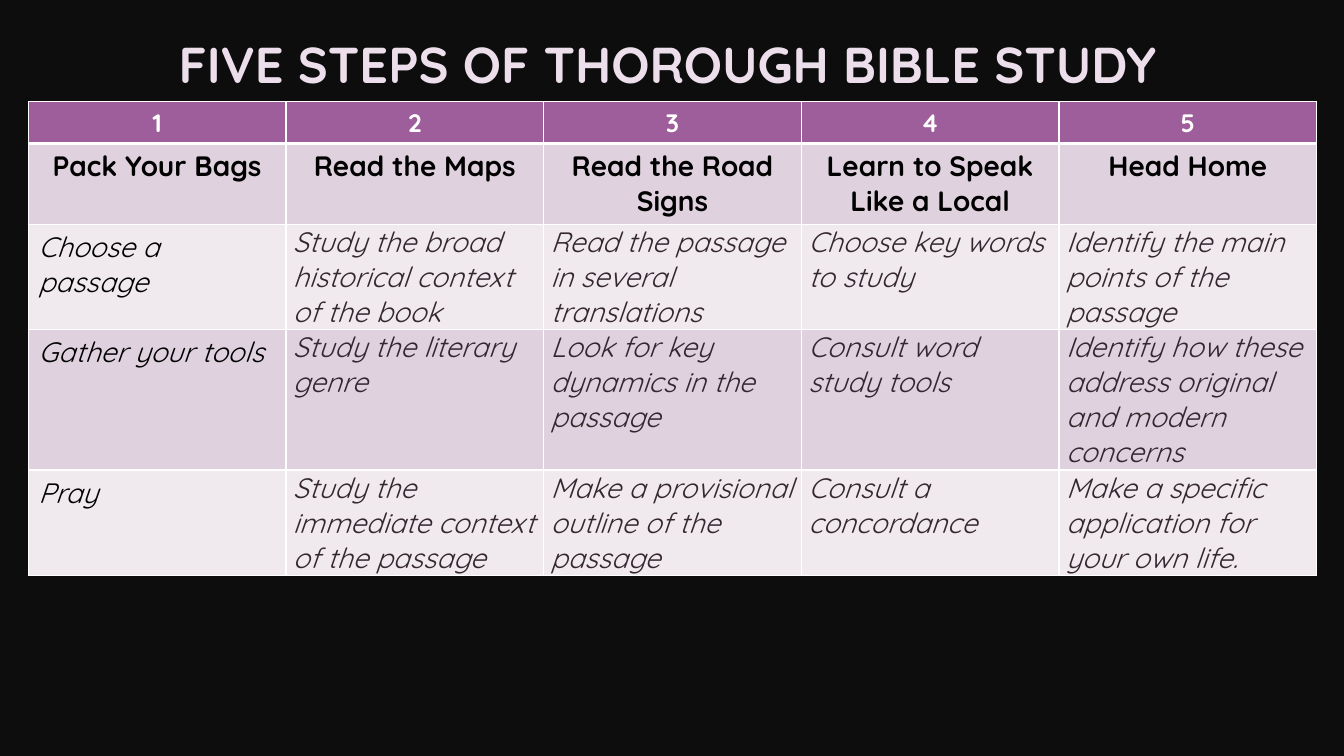
"""Build a slide with a table of five Bible study steps."""
from dataclasses import dataclass

from lxml import etree
from pptx import Presentation
from pptx.dml.color import RGBColor
from pptx.enum.text import MSO_ANCHOR, MSO_AUTO_SIZE, PP_ALIGN
from pptx.oxml.ns import qn
from pptx.slide import Slide
from pptx.table import _Cell
from pptx.text.text import _Paragraph
from pptx.util import Inches, Pt

CENTER, LEFT = PP_ALIGN.CENTER, PP_ALIGN.LEFT
TOP = MSO_ANCHOR.TOP
NO_AUTOFIT = MSO_AUTO_SIZE.NONE

FONT = "Quicksand"
COLORS = {
    "background": "0D0D0D",
    "title": "ECDFEB",
    "header": "9E5E9B",
    "dark_band": "DFD2DE",
    "light_band": "F0EAEF",
    "white": "FFFFFF",
    "black": "000000",
    "detail": "35272F",
}
SLIDE_WIDTH, SLIDE_HEIGHT = Inches(13.33), Inches(7.5)
CONTENT_WIDTH = Inches(12.78)
TITLE_ONLY_LAYOUT = 5
TITLE = "FIVE STEPS OF THOROUGH BIBLE STUDY"


@dataclass(frozen=True)
class TextStyle:
    size: int
    color: str
    bold: bool = False
    italic: bool = False
    alignment: PP_ALIGN = LEFT


@dataclass(frozen=True)
class StepRow:
    height: float
    fill: str
    texts: tuple[str, ...]
    first_style: TextStyle
    other_style: TextStyle
    top_border: float = 1
    bottom_border: float = 1
    tight: bool = False


TITLE_STYLE = TextStyle(36, "title", bold=True, alignment=CENTER)
NUMBER = TextStyle(18, "white", bold=True, alignment=CENTER)
HEADING = TextStyle(20, "black", bold=True, alignment=CENTER)
LEAD = TextStyle(20, "black", italic=True)
DETAIL = TextStyle(20, "detail", italic=True)

ROWS = (
    StepRow(0.41, "header", ("1", "2", "3", "4", "5"), NUMBER, NUMBER, bottom_border=3),
    StepRow(0.8, "dark_band", (
        "Pack Your Bags", "Read the Maps", "Read the Road Signs",
        "Learn to Speak Like a Local", "Head Home",
    ), HEADING, HEADING, top_border=3),
    StepRow(1.04, "light_band", (
        "Choose a passage",
        "Study the broad historical context of the book",
        "Read the passage in several translations",
        "Choose key words to study",
        "Identify the main points of the passage",
    ), LEAD, DETAIL, tight=True),
    StepRow(1.39, "dark_band", (
        "Gather your tools",
        "Study the literary genre",
        "Look for key dynamics in the passage",
        "Consult word study tools",
        "Identify how these address original and modern concerns",
    ), LEAD, DETAIL, tight=True),
    StepRow(1.04, "light_band", (
        "Pray",
        "Study the immediate context of the passage",
        "Make a provisional outline of the passage",
        "Consult a concordance",
        "Make a specific application for your own life.",
    ), LEAD, DETAIL, tight=True),
)


def color(name: str) -> RGBColor:
    return RGBColor.from_string(COLORS[name])


def style_paragraph(paragraph: _Paragraph, style: TextStyle) -> None:
    paragraph.alignment = style.alignment
    font = paragraph.font
    font.name = FONT
    font.size = Pt(style.size)
    font.bold = style.bold
    font.italic = style.italic
    font.color.rgb = color(style.color)


def add_borders(cell: _Cell, top: float, bottom: float) -> None:
    properties = cell._tc.get_or_add_tcPr()
    for side, width in (("L", 1), ("R", 1), ("T", top), ("B", bottom)):
        line = etree.SubElement(properties, qn(f"a:ln{side}"), w=str(Pt(width)))
        fill = etree.SubElement(line, qn("a:solidFill"))
        etree.SubElement(fill, qn("a:srgbClr"), val=COLORS["white"])


def fill_cell(cell: _Cell, row: StepRow, column: int) -> None:
    cell.text = row.texts[column]
    cell.vertical_anchor = TOP
    if row.tight and column > 0:
        cell.margin_left = cell.margin_right = Inches(0.07)
        cell.margin_top = cell.margin_bottom = 0
    style = row.other_style if column else row.first_style
    style_paragraph(cell.text_frame.paragraphs[0], style)
    add_borders(cell, row.top_border, row.bottom_border)
    cell.fill.solid()
    cell.fill.fore_color.rgb = color(row.fill)


def add_title(slide: Slide) -> None:
    title = slide.shapes.title
    title.left, title.top = Inches(0.23), Inches(0.28)
    title.width, title.height = CONTENT_WIDTH, Inches(0.94)
    frame = title.text_frame
    frame.text = TITLE
    frame.word_wrap = True
    frame.auto_size = NO_AUTOFIT
    frame.vertical_anchor = TOP
    style_paragraph(frame.paragraphs[0], TITLE_STYLE)


def add_steps_table(slide: Slide) -> None:
    column_count = len(ROWS[0].texts)
    height = Inches(sum(row.height for row in ROWS))
    table = slide.shapes.add_table(
        len(ROWS), column_count, Inches(0.28), Inches(1.01), CONTENT_WIDTH, height
    ).table
    table.first_row = table.horz_banding = False
    for column in table.columns:
        column.width = CONTENT_WIDTH // column_count
    for row_index, row in enumerate(ROWS):
        table.rows[row_index].height = Inches(row.height)
        for column_index in range(column_count):
            fill_cell(table.cell(row_index, column_index), row, column_index)


def main() -> None:
    presentation = Presentation()
    presentation.slide_width, presentation.slide_height = SLIDE_WIDTH, SLIDE_HEIGHT
    slide = presentation.slides.add_slide(presentation.slide_layouts[TITLE_ONLY_LAYOUT])
    slide.background.fill.solid()
    slide.background.fill.fore_color.rgb = color("background")
    add_title(slide)
    add_steps_table(slide)
    presentation.save("out.pptx")


if __name__ == "__main__":
    main()
